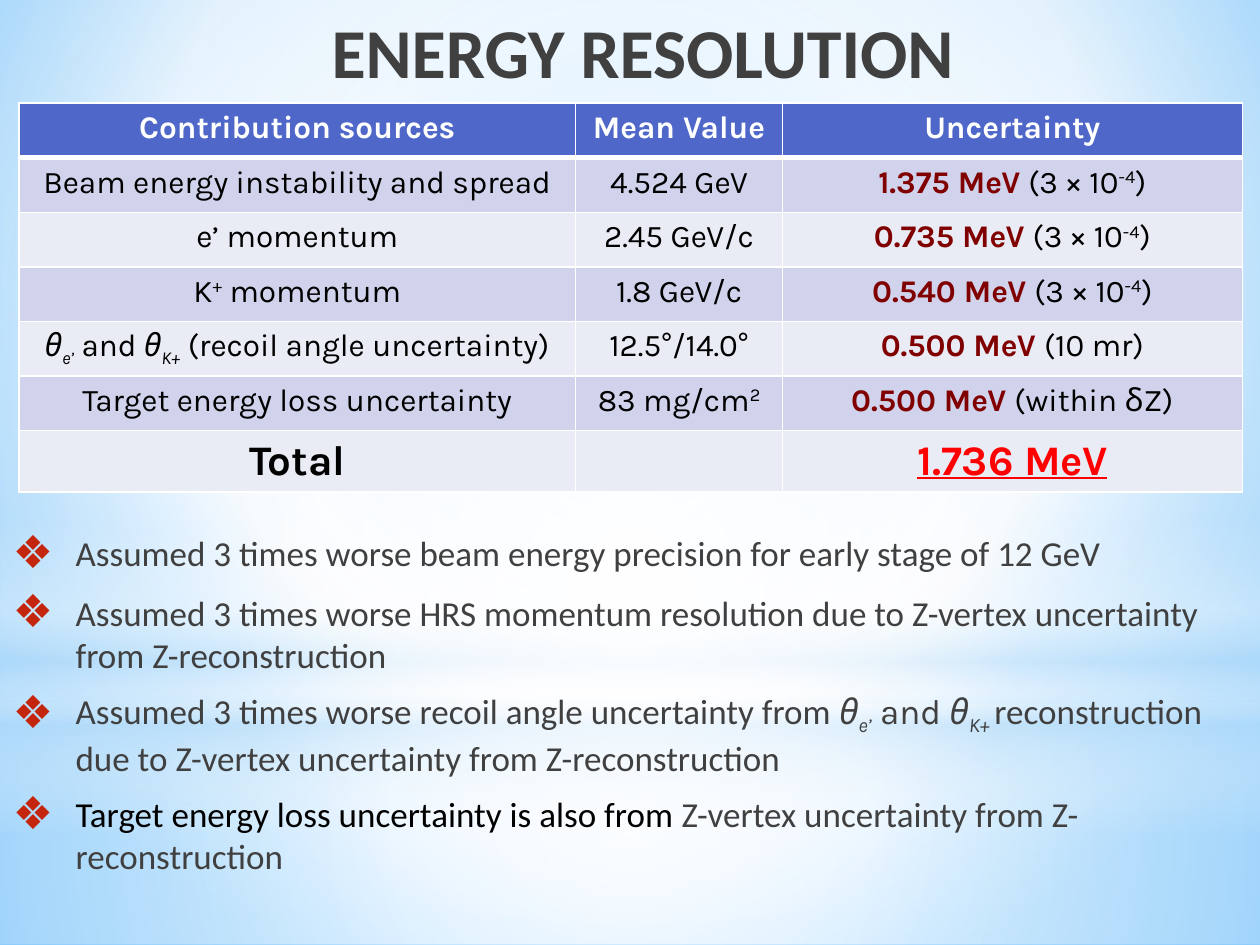
from dataclasses import dataclass

import lxml.etree
import pptx
import pptx.dml.color
import pptx.enum.shapes
import pptx.enum.text
import pptx.oxml.ns
import pptx.util

Pt = pptx.util.Pt
qn = pptx.oxml.ns.qn


@dataclass(frozen=True)
class Theme:
    """Fonts, colours and type sizes of the slide."""
    text_font: str = "Calibri"
    table_font: str = "Karla"
    title_size: int = 40
    total_size: int = 24
    body_size: int = 20
    cell_size: int = 18
    ink: str = "404040"
    black: str = "000000"
    white: str = "FFFFFF"
    header: str = "4E67C8"
    bands: tuple = ("E9EBF5", "D0D3EB")
    value: str = "800000"
    total: str = "FF0000"
    bullet: str = "C3260C"
    sky: str = "B4DCFA"
    sky_edge: str = "9ED5FF"
    sky_deep: str = "5BB9FF"


THEME = Theme()
VALUE = {"color": THEME.value, "bold": True}
TOTAL = {"size": THEME.total_size, "bold": True}
ITALIC = {"italic": True}
SUB = {"italic": True, "baseline": -25}
SUP = {"baseline": 30}
KARLA = {"font": THEME.table_font}

CENTER = (50, 50, 50, 50)
BACKGROUND = ([(0, THEME.sky_edge, 100), (60, THEME.white, 100),
               (100, THEME.sky_deep, 100)], (20, 10, 20, 60))
GLOWS = [
    ("RECTANGLE", (0, 402, 720, 138),
     [(0, THEME.white, 91), (37, THEME.white, 76), (100, THEME.sky, 79)], CENTER),
    ("RECTANGLE", (0, 0, 720, 402),
     [(0, THEME.white, 89), (48, THEME.white, 62), (100, THEME.sky, 79)], CENTER),
    ("RECTANGLE", (0, 297, 720, 180),
     [(0, THEME.white, 0), (29, THEME.white, 30), (45, THEME.sky, 40),
      (55, THEME.white, 26), (65, THEME.sky, 60), (100, THEME.white, 0)], None),
    ("OVAL", (0, 126, 720, 402),
     [(0, THEME.white, 100), (56, THEME.white, 0)], CENTER),
]


def theta_pair(**base):
    """Return the runs for the two angle symbols joined by 'and'."""
    return [("θ", base | ITALIC), ("e’", base | SUB), (" and ", base),
            ("θ", base | ITALIC), ("K+", base | SUB)]


def power_value(value):
    """Return the runs for an energy with its relative uncertainty."""
    return [(f"{value} MeV ", VALUE), ("(3 × 10", {}), ("-4", SUP), (")", {})]


HEADER = {"color": THEME.white, "bold": True}
COLUMN_WIDTHS = (318.2, 118.1, 262.8)
ROW_HEIGHT = 31.2
ROWS = [
    [[("Contribution sources", HEADER)], [("Mean Value", HEADER)], [("Uncertainty", HEADER)]],
    [[("Beam energy instability and spread", {})], [("4.524 GeV", {})], power_value("1.375")],
    [[("e’ momentum", {})], [("2.45 GeV/c", {})], power_value("0.735")],
    [[("K", {}), ("+", SUP), (" momentum", {})], [("1.8 GeV/c", {})], power_value("0.540")],
    [theta_pair() + [(" (recoil angle uncertainty)", {})], [("12.5°/14.0°", {})],
     [("0.500 MeV ", VALUE), ("(10 mr)", {})]],
    [[("Target energy loss uncertainty", {})], [("83 mg/cm", {}), ("2", SUP)],
     [("0.500 MeV ", VALUE), ("(within δZ)", {})]],
    [[("Total", TOTAL)], [],
     [("1.736 MeV", TOTAL | {"color": THEME.total, "underline": True})]],
]
BULLETS = [
    [("Assumed 3 times worse beam energy precision for early stage of 12 GeV", {})],
    [("Assumed 3 times worse HRS momentum resolution due to Z-vertex uncertainty "
      "from Z-reconstruction", {})],
    [("Assumed 3 times worse recoil angle uncertainty from ", {}), *theta_pair(**KARLA),
     (" ", KARLA | SUB),
     ("reconstruction due to Z-vertex uncertainty from Z-reconstruction", {})],
    [("Target energy loss uncertainty is also from ", {"color": THEME.black}),
     ("Z-vertex uncertainty from Z-reconstruction", {})],
]


def rgb(color):
    """Turn a hex string into a colour."""
    return pptx.dml.color.RGBColor.from_string(color)


def add_element(parent, tag, **attributes):
    """Append a drawing element with the given attributes."""
    values = {name: str(value) for name, value in attributes.items()}
    return lxml.etree.SubElement(parent, qn(tag), values)


def paint_gradient(fill, owner, stops, focus):
    """Fill with translucent stops, round a focus or from top to bottom."""
    fill.gradient()
    gradient = next(owner.iter(qn("a:gradFill")))
    for child in list(gradient):
        gradient.remove(child)
    stop_list = add_element(gradient, "a:gsLst")
    for position, color, opacity in stops:
        stop = add_element(stop_list, "a:gs", pos=position * 1000)
        color_element = add_element(stop, "a:srgbClr", val=color)
        if opacity < 100:
            add_element(color_element, "a:alpha", val=opacity * 1000)
    if focus is None:
        add_element(gradient, "a:lin", ang=90 * 60000, scaled=0)
    else:
        circle = add_element(gradient, "a:path", path="circle")
        sides = {side: inset * 1000 for side, inset in zip("ltrb", focus)}
        add_element(circle, "a:fillToRect", **sides)


def write_runs(paragraph, runs, base):
    """Write styled runs, each adding to the base style."""
    for text, changes in runs:
        style = base | changes
        run = paragraph.add_run()
        run.text = text
        run.font.name = style["font"]
        run.font.size = Pt(style["size"])
        run.font.color.rgb = rgb(style["color"])
        run.font.bold = style.get("bold", False)
        run.font.italic = style.get("italic", False)
        run.font.underline = style.get("underline", False)
        if "baseline" in style:
            run.font._element.set("baseline", str(style["baseline"] * 1000))


def place(shape, box):
    """Move a shape to a box given in points."""
    shape.left, shape.top, shape.width, shape.height = map(Pt, box)


def build_backdrop(slide):
    """Paint the background and lay the soft glows behind everything."""
    paint_gradient(slide.background.fill, slide._element, *BACKGROUND)
    shape_tree = slide.shapes._spTree
    for index, (kind, box, stops, focus) in enumerate(GLOWS, start=2):
        preset = getattr(pptx.enum.shapes.MSO_SHAPE, kind)
        shape = slide.shapes.add_shape(preset, *map(Pt, box))
        shape.shadow.inherit = False
        shape.line.fill.background()
        paint_gradient(shape.fill, shape._element, stops, focus)
        shape_tree.insert(index, shape._element)


def build_title(title, box):
    """Place and format the slide title."""
    place(title, box)
    paragraph = title.text_frame.paragraphs[0]
    paragraph.alignment = pptx.enum.text.PP_ALIGN.CENTER
    paragraph._p.get_or_add_pPr().set("marL", str(Pt(14.4)))
    title.text_frame.auto_size = pptx.enum.text.MSO_AUTO_SIZE.NONE
    write_runs(paragraph, [("ENERGY RESOLUTION", {"bold": True})],
               {"font": THEME.text_font, "size": THEME.title_size, "color": THEME.ink})


def format_cell(cell, row_index, runs):
    """Give a cell its borders, band colour and text."""
    properties = cell._tc.get_or_add_tcPr()
    widths = {"L": 1, "R": 1, "T": 3 if row_index == 1 else 1, "B": 3 if row_index == 0 else 1}
    for side, width in widths.items():
        border = add_element(properties, f"a:ln{side}", w=Pt(width))
        add_element(add_element(border, "a:solidFill"), "a:srgbClr", val=THEME.white)
    cell.fill.solid()
    cell.fill.fore_color.rgb = rgb(THEME.bands[row_index % 2] if row_index else THEME.header)
    paragraph = cell.text_frame.paragraphs[0]
    paragraph.alignment = pptx.enum.text.PP_ALIGN.CENTER
    write_runs(paragraph, runs, {"font": THEME.table_font, "size": THEME.cell_size,
                                 "color": THEME.black})


def build_table(slide, left, top):
    """Add the table of contributions to the resolution."""
    frame = slide.shapes.add_table(len(ROWS), len(COLUMN_WIDTHS), Pt(left), Pt(top),
                                   Pt(sum(COLUMN_WIDTHS)), Pt(ROW_HEIGHT * len(ROWS)))
    for column, width in zip(frame.table.columns, COLUMN_WIDTHS):
        column.width = Pt(width)
    for row_index, row in enumerate(ROWS):
        frame.table.rows[row_index].height = Pt(ROW_HEIGHT)
        for column_index, runs in enumerate(row):
            format_cell(frame.table.cell(row_index, column_index), row_index, runs)


def build_bullets(body, box):
    """Place the list of assumptions in the body placeholder."""
    place(body, box)
    text_frame = body.text_frame
    text_frame.auto_size = pptx.enum.text.MSO_AUTO_SIZE.NONE
    for index, runs in enumerate(BULLETS):
        paragraph = text_frame.add_paragraph() if index else text_frame.paragraphs[0]
        paragraph.space_before = Pt(0)
        paragraph.space_after = Pt(8 if index else 10)
        properties = paragraph._p.get_or_add_pPr()
        properties.set("marL", str(Pt(36)))
        properties.set("indent", str(Pt(-36)))
        add_element(add_element(properties, "a:buClr"), "a:srgbClr", val=THEME.bullet)
        add_element(properties, "a:buSzPct", val=130000)
        add_element(properties, "a:buChar", char="❖")
        write_runs(paragraph, runs, {"font": THEME.text_font, "size": THEME.body_size,
                                     "color": THEME.ink})


def main():
    """Build the slide and save it."""
    presentation = pptx.Presentation()
    presentation.slide_width, presentation.slide_height = Pt(720), Pt(540)
    slide = presentation.slides.add_slide(presentation.slide_layouts[1])
    build_backdrop(slide)
    build_title(slide.shapes.title, (0, 0, 720, 57.6))
    build_table(slide, 10.8, 59)
    build_bullets(slide.placeholders[1], (0, 300.2, 720, 212.4))
    presentation.save("out.pptx")


if __name__ == "__main__":
    main()
